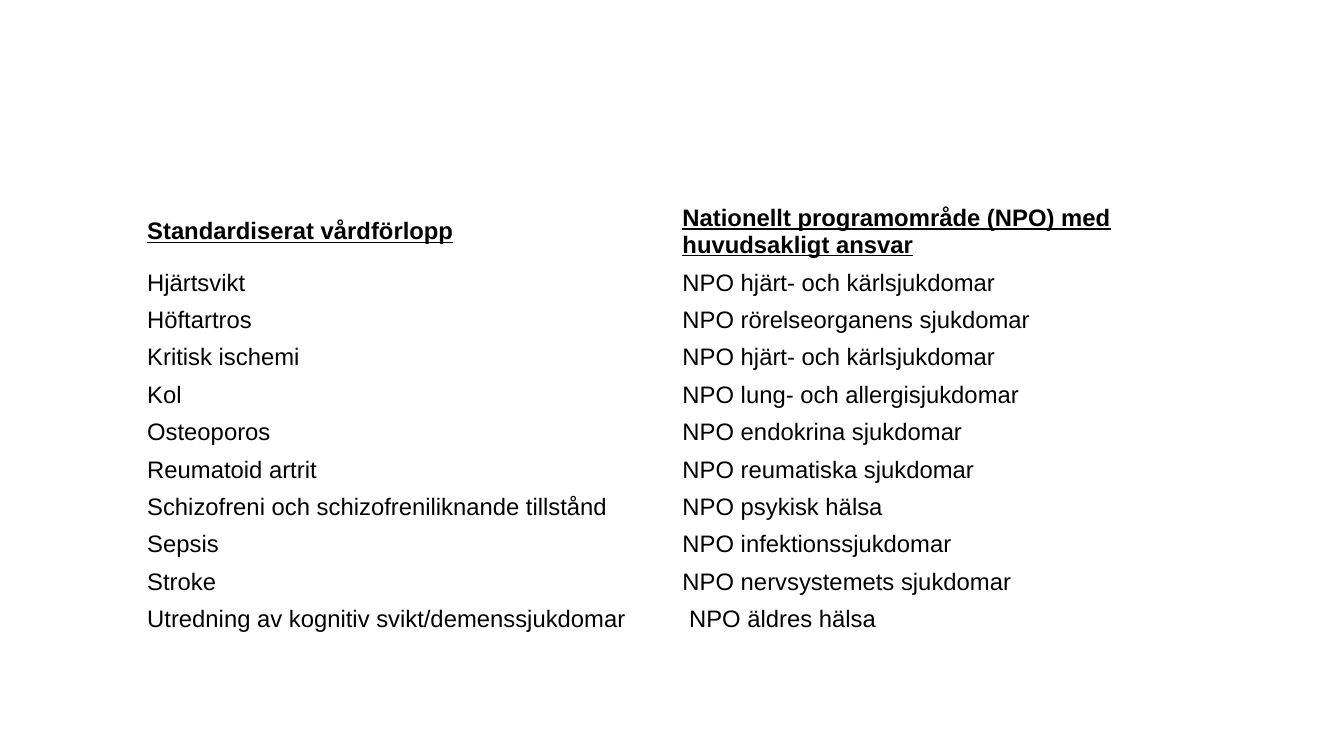
from dataclasses import dataclass

from pptx import Presentation
from pptx.dml.color import RGBColor
from pptx.enum.text import MSO_ANCHOR
from pptx.util import Inches, Pt


@dataclass(frozen=True)
class Theme:
    """Colours, type and cell margins of the slide."""
    font: str = "Arial"
    size: int = 17
    text: str = "000000"
    background: str = "FFFFFF"
    side_margin: float = 0.1
    edge_margin: float = 0.05


THEME = Theme()
SLIDE_WIDTH, SLIDE_HEIGHT = 13.33, 7.5
TABLE_LEFT, TABLE_TOP = 10.2, 26.27
COLUMN_WIDTHS = (39.83, 40.06)
HEADER_HEIGHT, ROW_HEIGHT = 8.67, 4.95

HEADINGS = ("Standardiserat vårdförlopp",
            "Nationellt programområde (NPO) med huvudsakligt ansvar")
CARE_PATHWAYS = (
    ("Hjärtsvikt", "NPO hjärt- och kärlsjukdomar"),
    ("Höftartros", "NPO rörelseorganens sjukdomar"),
    ("Kritisk ischemi", "NPO hjärt- och kärlsjukdomar"),
    ("Kol", "NPO lung- och allergisjukdomar"),
    ("Osteoporos", "NPO endokrina sjukdomar"),
    ("Reumatoid artrit", "NPO reumatiska sjukdomar"),
    ("Schizofreni och schizofreniliknande tillstånd", "NPO psykisk hälsa"),
    ("Sepsis", "NPO infektionssjukdomar"),
    ("Stroke", "NPO nervsystemets sjukdomar"),
    ("Utredning av kognitiv svikt/demenssjukdomar", " NPO äldres hälsa"),
)


def across(percent):
    """Return a share of the slide's width."""
    return Inches(SLIDE_WIDTH * percent / 100)


def down(percent):
    """Return a share of the slide's height."""
    return Inches(SLIDE_HEIGHT * percent / 100)


def set_attributes(target, values):
    """Set every named attribute on the target."""
    for name, value in values.items():
        setattr(target, name, value)


def fill_cell(cell, text, is_heading):
    """Write one table cell, with headings bold and underlined."""
    cell.fill.background()
    set_attributes(cell, {
        "vertical_anchor": MSO_ANCHOR.MIDDLE,
        "margin_left": Inches(THEME.side_margin),
        "margin_right": Inches(THEME.side_margin),
        "margin_top": Inches(THEME.edge_margin),
        "margin_bottom": Inches(THEME.edge_margin),
    })
    run = cell.text_frame.paragraphs[0].add_run()
    run.text = text
    set_attributes(run.font, {
        "name": THEME.font,
        "size": Pt(THEME.size),
        "bold": is_heading,
        "underline": is_heading,
    })
    run.font.color.rgb = RGBColor.from_string(THEME.text)


def add_pathway_table(slide, headings, pathways):
    """Add the plain table of care pathways and responsible areas."""
    rows = (headings, *pathways)
    heights = [HEADER_HEIGHT] + [ROW_HEIGHT] * len(pathways)
    table = slide.shapes.add_table(
        len(rows), len(headings), across(TABLE_LEFT), down(TABLE_TOP),
        across(sum(COLUMN_WIDTHS)), down(sum(heights))).table
    set_attributes(table, {"first_row": False, "horz_banding": False})
    for column, width in zip(table.columns, COLUMN_WIDTHS):
        column.width = across(width)
    for row_index, (texts, height) in enumerate(zip(rows, heights)):
        table.rows[row_index].height = down(height)
        for column_index, text in enumerate(texts):
            fill_cell(table.cell(row_index, column_index), text, row_index == 0)


def main():
    """Build the slide and save the presentation."""
    presentation = Presentation()
    set_attributes(presentation, {
        "slide_width": Inches(SLIDE_WIDTH),
        "slide_height": Inches(SLIDE_HEIGHT),
    })
    slide = presentation.slides.add_slide(presentation.slide_layouts[6])
    background = slide.background.fill
    background.solid()
    background.fore_color.rgb = RGBColor.from_string(THEME.background)
    add_pathway_table(slide, HEADINGS, CARE_PATHWAYS)
    presentation.save("out.pptx")


if __name__ == "__main__":
    main()
